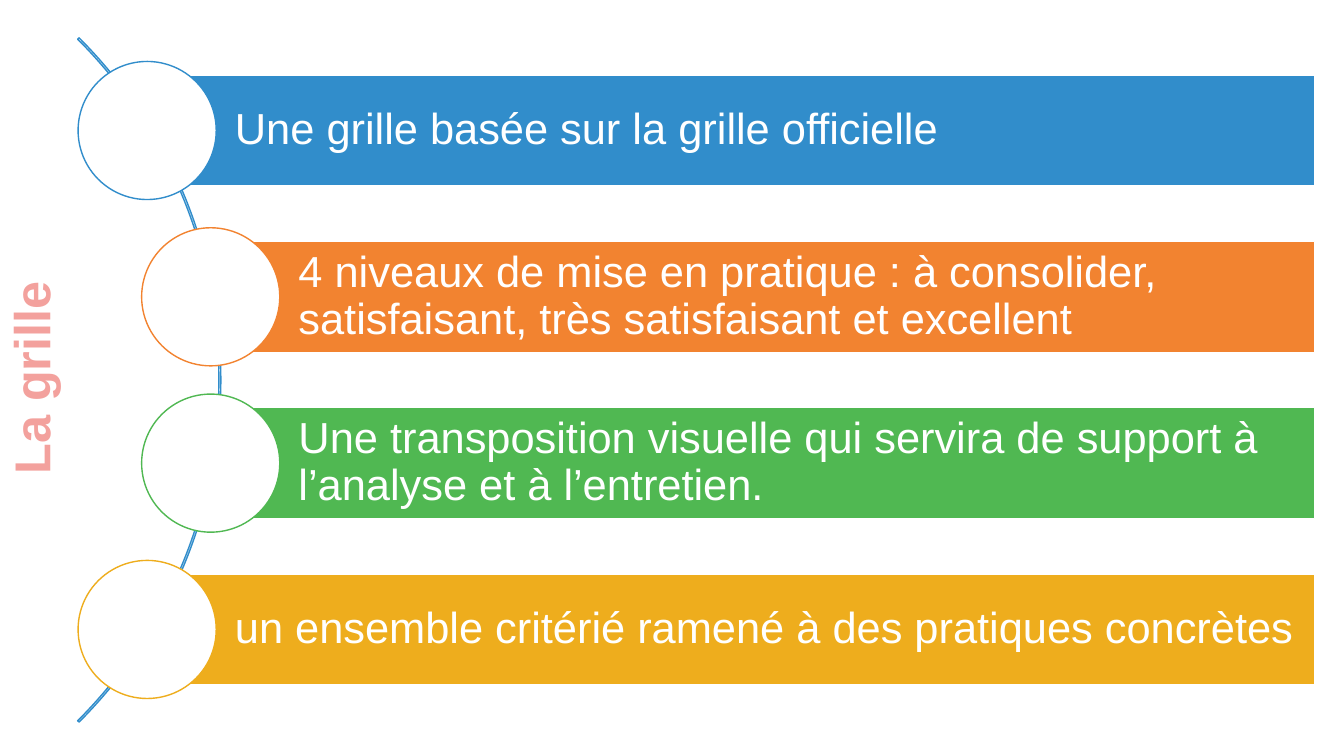
from dataclasses import dataclass

from pptx import Presentation
from pptx.dml.color import RGBColor
from pptx.enum.shapes import MSO_SHAPE
from pptx.enum.text import MSO_ANCHOR, MSO_AUTO_SIZE, PP_ALIGN
from pptx.util import Inches, Pt

ARC, RECT, OVAL = MSO_SHAPE.BLOCK_ARC, MSO_SHAPE.RECTANGLE, MSO_SHAPE.OVAL
MIDDLE, NO_FIT = MSO_ANCHOR.MIDDLE, MSO_AUTO_SIZE.NONE
LEFT, CENTER = PP_ALIGN.LEFT, PP_ALIGN.CENTER


@dataclass(frozen=True)
class Theme:
    font: str = "Arial"
    title_size: int = 36
    body_size: int = 31
    line_width: int = 1
    title: str = "F3A19D"
    white: str = "FFFFFF"
    blue: str = "318DCB"
    orange: str = "F28330"
    green: str = "50B852"
    yellow: str = "EEAD1D"


@dataclass(frozen=True)
class Grid:
    width: float = 13.33
    height: float = 7.5
    left: float = 1.46
    right: float = 13.04
    middle: float = 3.77
    column: float = 0.63
    bar: float = 1.1
    pitch: float = 1.65
    circle: float = 1.37
    rows: int = 4

    def x(self, col):
        return self.left + col * self.column

    def y(self, row):
        return self.middle + (row - (self.rows - 1) / 2) * self.pitch


class Deck:
    """Draws a curved list on one title-only slide."""

    def __init__(self, theme, grid):
        self.theme, self.grid = theme, grid
        self.prs = Presentation()
        self.prs.slide_width = Inches(grid.width)
        self.prs.slide_height = Inches(grid.height)
        self.slide = self.prs.slides.add_slide(self.prs.slide_layouts[5])

    def text(self, tf, text, size, color, align, bold=False):
        tf.word_wrap = True
        tf.auto_size = NO_FIT
        tf.vertical_anchor = MIDDLE
        p = tf.paragraphs[0]
        p.alignment = align
        r = p.add_run()
        r.text = text
        r.font.name = self.theme.font
        r.font.size = Pt(size)
        r.font.bold = bold
        r.font.color.rgb = RGBColor.from_string(color)
        return p

    def title(self, text, center_x, center_y, length, depth):
        s = self.slide.shapes.title
        s.left, s.top = Inches(center_x - length / 2), Inches(center_y - depth / 2)
        s.width, s.height = Inches(length), Inches(depth)
        s.rotation = 270
        self.text(s.text_frame, text, self.theme.title_size, self.theme.title, CENTER, True)

    def shape(self, kind, x, y, w, h, line, fill=None):
        s = self.slide.shapes.add_shape(kind, Inches(x), Inches(y), Inches(w), Inches(h))
        s.shadow.inherit = False
        s.line.color.rgb = RGBColor.from_string(line)
        s.line.width = Pt(self.theme.line_width)
        if fill:
            s.fill.solid()
            s.fill.fore_color.rgb = RGBColor.from_string(fill)
        else:
            s.fill.background()
        return s

    def arc(self, center_x, size):
        s = self.shape(ARC, center_x - size / 2, self.grid.middle - size / 2,
                       size, size, self.theme.blue)
        for i, value in enumerate((189, 27, 0.002)):
            s.adjustments[i] = value

    def bar(self, col, row, text, color):
        g, t = self.grid, self.theme
        x, y = g.x(col), g.y(row)
        s = self.shape(RECT, x, y - g.bar / 2, g.right - x, g.bar, t.white, color)
        tf = s.text_frame
        tf.margin_left = Inches(0.87)
        tf.margin_top = tf.margin_right = tf.margin_bottom = Inches(0.09)
        p = self.text(tf, text, t.body_size, t.white, LEFT)
        p.line_spacing = 0.9

    def circle(self, col, row, color):
        g = self.grid
        self.shape(OVAL, g.x(col) - g.circle / 2, g.y(row) - g.circle / 2,
                   g.circle, g.circle, color, self.theme.white)


def main():
    theme, grid = Theme(), Grid()
    deck = Deck(theme, grid)
    deck.title("La grille", 0.3, grid.height / 2, grid.height, 0.71)
    deck.arc(-2.61, 9.6)
    items = [
        (0, "Une grille basée sur la grille officielle", theme.blue),
        (1, "4 niveaux de mise en pratique : à consolider, satisfaisant, "
            "très satisfaisant et excellent", theme.orange),
        (1, "Une transposition visuelle qui servira de support à l’analyse "
            "et à l’entretien.", theme.green),
        (0, "un ensemble critérié ramené à des pratiques concrètes", theme.yellow),
    ]
    for row, (col, text, color) in enumerate(items):
        deck.bar(col, row, text, color)
        deck.circle(col, row, color)
    deck.prs.save("out.pptx")


if __name__ == "__main__":
    main()
